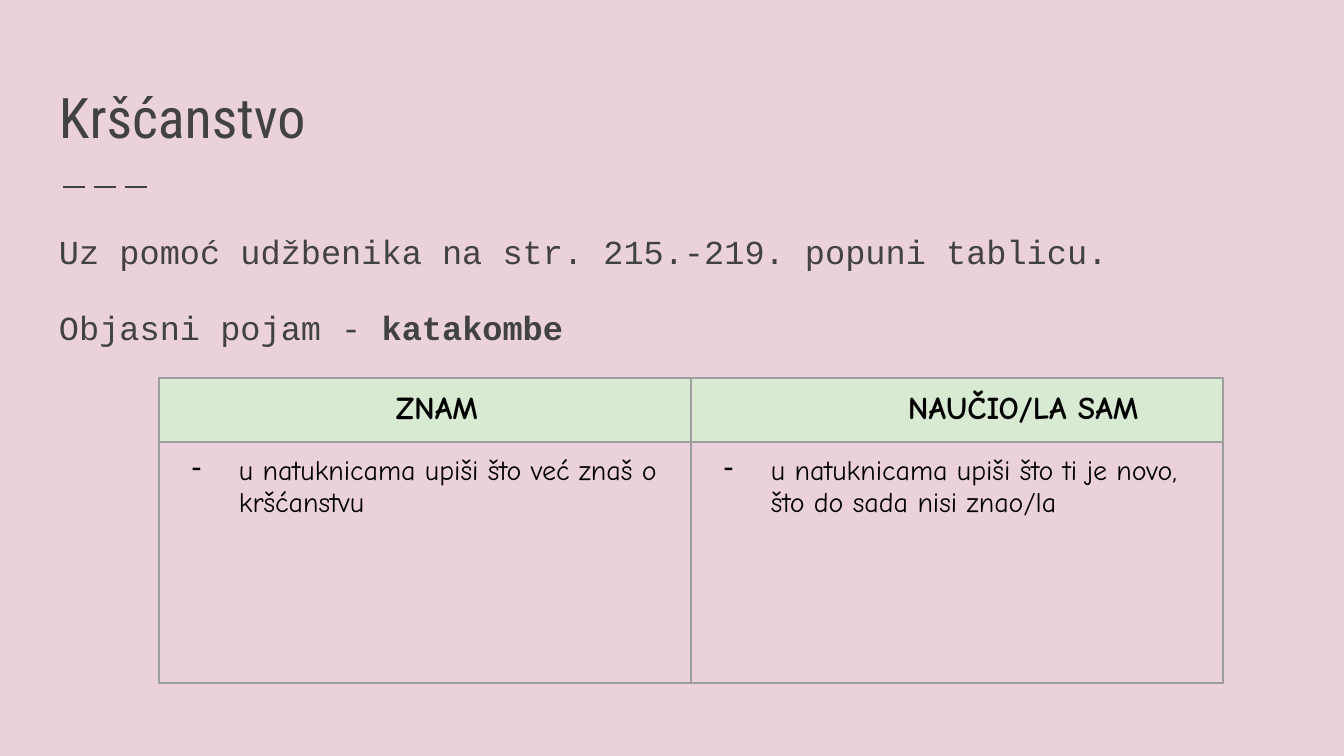
from dataclasses import dataclass

from lxml.etree import SubElement
from pptx import Presentation
from pptx.dml.color import RGBColor
from pptx.enum.dml import MSO_LINE
from pptx.enum.shapes import MSO_CONNECTOR
from pptx.enum.text import MSO_ANCHOR
from pptx.oxml.ns import qn
from pptx.util import Emu, Pt

EMU_PER_PX = 914400 / 134.4
INSET = 13


@dataclass(frozen=True)
class Theme:
    background: str = "EAD1DC"
    ink: str = "424242"
    cell_ink: str = "000000"
    header_fill: str = "D9EAD3"
    border: str = "9E9E9E"
    title_font: str = "Roboto Condensed"
    body_font: str = "Courier New"
    table_font: str = "Comic Neue"
    title_size: int = 30
    body_size: int = 18
    header_size: int = 17
    cell_size: int = 15
    rule_width: float = 1.5
    border_width: float = 0.75


@dataclass(frozen=True)
class Column:
    heading: str
    heading_indent: int
    prompt: str


THEME = Theme()
COLUMNS = [
    Column("ZNAM", 224, "u natuknicama upiši što već znaš o kršćanstvu"),
    Column("NAUČIO/LA SAM", 204,
           "u natuknicama upiši što ti je novo, što do sada nisi znao/la"),
]
COLUMN_WIDTH = 532
ROW_HEIGHTS = [63, 241]


def px(n: int) -> Emu:
    return Emu(round(n * EMU_PER_PX))


def rgb(value: str) -> RGBColor:
    return RGBColor.from_string(value)


def write(p, text: str, *, font: str, size: int, color: str, bold: bool = False,
          left: int = 0, hanging: int = 0, bullet: str = "",
          spacing: float = 1.0, before: int = 0) -> None:
    """Append a run to a paragraph and set the paragraph's layout."""
    p.line_spacing, p.space_before = spacing, Pt(before)
    pPr = p._p.get_or_add_pPr()
    pPr.set("marL", str(px(left)))
    pPr.set("indent", str(-px(hanging)))
    if bullet:
        clr = SubElement(pPr, qn("a:buClr"))
        SubElement(clr, qn("a:srgbClr"), val=color)
        SubElement(pPr, qn("a:buChar"), char=bullet)
    r = p.add_run()
    r.text = text
    r.font.name, r.font.size, r.font.bold = font, Pt(size), bold
    r.font.color.rgb = rgb(color)


def set_insets(target) -> None:
    target.margin_left = target.margin_right = px(INSET)
    target.margin_top = target.margin_bottom = px(INSET)


def add_text_frame(s, x: int, y: int, w: int, h: int, anchor: MSO_ANCHOR):
    tf = s.shapes.add_textbox(px(x), px(y), px(w), px(h)).text_frame
    tf.word_wrap, tf.vertical_anchor = True, anchor
    set_insets(tf)
    return tf


def add_dashed_rule(s, x1: int, x2: int, y: int) -> None:
    rule = s.shapes.add_connector(MSO_CONNECTOR.STRAIGHT, px(x1), px(y), px(x2), px(y))
    rule.line.color.rgb = rgb(THEME.ink)
    rule.line.width = Pt(THEME.rule_width)
    rule.line.dash_style = MSO_LINE.LONG_DASH
    SubElement(rule._element.spPr, qn("a:effectLst"))


def style_cell(cell, fill: str = "") -> None:
    set_insets(cell)
    tcPr = cell._tc.get_or_add_tcPr()
    for side in ("lnL", "lnR", "lnT", "lnB"):
        ln = SubElement(tcPr, qn(f"a:{side}"), w=str(Pt(THEME.border_width)))
        solid = SubElement(ln, qn("a:solidFill"))
        SubElement(solid, qn("a:srgbClr"), val=THEME.border)
    if fill:
        cell.fill.solid()
        cell.fill.fore_color.rgb = rgb(fill)
    else:
        cell.fill.background()


def add_knowledge_table(s, x: int, y: int, columns: list[Column]) -> None:
    table = s.shapes.add_table(
        len(ROW_HEIGHTS), len(columns), px(x), px(y),
        px(COLUMN_WIDTH * len(columns)), px(sum(ROW_HEIGHTS))).table
    table.first_row = table.horz_banding = False
    for row, height in zip(table.rows, ROW_HEIGHTS):
        row.height = px(height)
    for i, column in enumerate(columns):
        table.columns[i].width = px(COLUMN_WIDTH)
        header, body = table.cell(0, i), table.cell(1, i)
        style_cell(header, THEME.header_fill)
        style_cell(body)
        write(header.text_frame.paragraphs[0], column.heading, font=THEME.table_font,
              size=THEME.header_size, color=THEME.cell_ink, bold=True,
              left=column.heading_indent)
        write(body.text_frame.paragraphs[0], column.prompt, font=THEME.table_font,
              size=THEME.cell_size, color=THEME.cell_ink,
              left=67, hanging=47, bullet="-")


def main() -> None:
    prs = Presentation()
    prs.slide_width, prs.slide_height = px(1344), px(756)
    s = prs.slides.add_slide(prs.slide_layouts[6])
    s.background.fill.solid()
    s.background.fill.fore_color.rgb = rgb(THEME.background)

    # Title and its rule
    add_dashed_rule(s, 63, 153, 187)
    tf = add_text_frame(s, 46, 55, 1252, 108, MSO_ANCHOR.BOTTOM)
    write(tf.paragraphs[0], "Kršćanstvo", font=THEME.title_font,
          size=THEME.title_size, color=THEME.ink)

    # Instructions
    tf = add_text_frame(s, 46, 212, 1252, 458, MSO_ANCHOR.TOP)
    body = dict(font=THEME.body_font, size=THEME.body_size, color=THEME.ink, spacing=1.15)
    write(tf.paragraphs[0], "Uz pomoć udžbenika na str. 215.-219. popuni tablicu.", **body)
    p = tf.add_paragraph()
    write(p, "Objasni pojam - ", before=16, **body)
    write(p, "katakombe", before=16, bold=True, **body)

    # Table to fill in
    add_knowledge_table(s, 159, 378, COLUMNS)

    prs.save("out.pptx")


if __name__ == "__main__":
    main()
